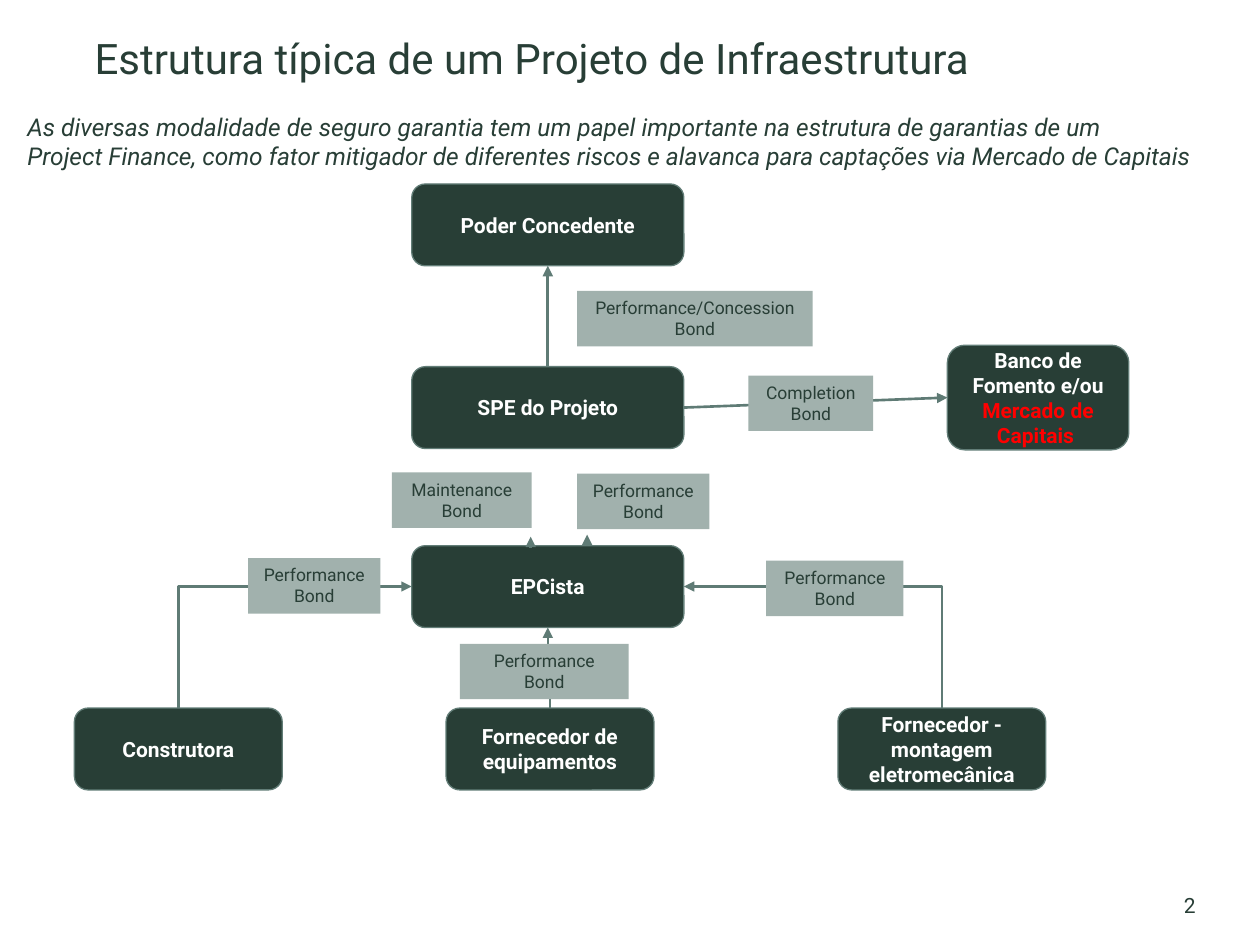
from dataclasses import dataclass

from lxml.etree import SubElement
from pptx import Presentation
from pptx.dml.color import RGBColor
from pptx.enum.shapes import MSO_CONNECTOR, MSO_SHAPE
from pptx.enum.text import MSO_ANCHOR, PP_ALIGN
from pptx.oxml.ns import qn
from pptx.util import Pt

FONT = "Roboto"
COLORS = {
    "dark": "283E36",
    "border": "627D77",
    "arrow": "5F7B75",
    "bond": "A1B1AD",
    "white": "FFFFFF",
    "accent": "FF0000",
}
BOND_HEIGHT = 31.7


@dataclass(frozen=True)
class Party:
    text: str
    left: float
    top: float
    width: float
    height: float = 46.8
    accent: str = ""

    @property
    def right(self) -> float:
        return self.left + self.width

    @property
    def bottom(self) -> float:
        return self.top + self.height

    @property
    def center(self) -> float:
        return self.left + self.width / 2

    @property
    def middle(self) -> float:
        return self.top + self.height / 2


@dataclass(frozen=True)
class Bond:
    kind: str
    left: float
    top: float
    width: float


@dataclass(frozen=True)
class RisingArrow:
    start_x: float
    start_y: float
    end_x: float
    end_y: float
    preset: str = "bentConnector3"


GRANTOR = Party("Poder Concedente", 235.3, 105.1, 155.5)
PROJECT = Party("SPE do Projeto", 235.3, 209.5, 155.5)
CONTRACTOR = Party("EPCista", 235.3, 311.8, 155.5)
BANK = Party("Banco de Fomento e/ou ", 541.4, 197.3, 103.7, 59.8, "Mercado de Capitais ")
BUILDER = Party("Construtora", 42.5, 404.6, 118.8)
SUPPLIER = Party("Fornecedor de equipamentos", 254.9, 404.6, 118.8)
ASSEMBLER = Party("Fornecedor -\nmontagem eletromecânica", 478.8, 404.6, 118.8)
PARTIES = [CONTRACTOR, PROJECT, BANK, BUILDER, SUPPLIER, ASSEMBLER, GRANTOR]

RISING_ARROWS = [
    RisingArrow(BUILDER.center, BUILDER.top, CONTRACTOR.left, CONTRACTOR.middle, "bentConnector2"),
    RisingArrow(SUPPLIER.center, SUPPLIER.top, CONTRACTOR.center, CONTRACTOR.bottom),
    RisingArrow(ASSEMBLER.center, ASSEMBLER.top, CONTRACTOR.right, CONTRACTOR.middle, "bentConnector2"),
    RisingArrow(335.5, CONTRACTOR.top, 335.5, 305.5),
    RisingArrow(303.3, 313, 303.3, 306.7),
    RisingArrow(PROJECT.center, PROJECT.top, GRANTOR.center, GRANTOR.bottom),
]

BONDS = [
    Bond("Performance", 141.8, 319, 75.6),
    Bond("Performance", 437.8, 320.4, 78.5),
    Bond("Performance", 262.8, 367.9, 96.5),
    Bond("Performance", 329.8, 270.7, 75.6),
    Bond("Performance/Concession", 329.8, 166.3, 134.6),
    Bond("Maintenance", 223.9, 270, 79.9),
    Bond("Completion", 427.7, 214.6, 71.3),
]


def rgb(name: str) -> RGBColor:
    return RGBColor.from_string(COLORS[name])


def write_text(text_frame, text: str, *, size: float, color: str = "dark", bold=False,
               italic=False, align=PP_ALIGN.LEFT, anchor=MSO_ANCHOR.TOP, wrap=True,
               margin=None, line_spacing=None, accent: str = "") -> None:
    text_frame.word_wrap = wrap
    text_frame.vertical_anchor = anchor
    if margin is not None:
        text_frame.margin_left = text_frame.margin_right = Pt(margin)
        text_frame.margin_top = text_frame.margin_bottom = Pt(margin)
    lines = text.split("\n")
    for index, line in enumerate(lines):
        paragraph = text_frame.paragraphs[0] if index == 0 else text_frame.add_paragraph()
        paragraph.alignment = align
        if line_spacing:
            paragraph.line_spacing = line_spacing
        pieces = [(line, color)]
        if accent and index == len(lines) - 1:
            pieces.append((accent, "accent"))
        for content, run_color in pieces:
            run = paragraph.add_run()
            run.text = content
            run.font.name = FONT
            run.font.size = Pt(size)
            run.font.bold = bold
            run.font.italic = italic
            run.font.color.rgb = rgb(run_color)


def add_box(slide, preset, left: float, top: float, width: float, height: float, fill: str):
    shape = slide.shapes.add_shape(preset, Pt(left), Pt(top), Pt(width), Pt(height))
    shape.shadow.inherit = False
    shape.fill.solid()
    shape.fill.fore_color.rgb = rgb(fill)
    return shape


def draw_party(slide, party: Party) -> None:
    shape = add_box(slide, MSO_SHAPE.ROUNDED_RECTANGLE, party.left, party.top,
                    party.width, party.height, "dark")
    shape.line.color.rgb = rgb("border")
    shape.line.width = Pt(0.75)
    write_text(shape.text_frame, party.text, size=12, color="white", bold=True,
               align=PP_ALIGN.CENTER, anchor=MSO_ANCHOR.MIDDLE, accent=party.accent)


def draw_bond(slide, bond: Bond) -> None:
    shape = add_box(slide, MSO_SHAPE.RECTANGLE, bond.left, bond.top,
                    bond.width, BOND_HEIGHT, "bond")
    shape.line.fill.background()
    write_text(shape.text_frame, f"{bond.kind}\nBond", size=10, align=PP_ALIGN.CENTER)


def add_arrow(slide, kind, start_x: float, start_y: float, end_x: float, end_y: float):
    connector = slide.shapes.add_connector(kind, Pt(start_x), Pt(start_y), Pt(end_x), Pt(end_y))
    connector.line.color.rgb = rgb("arrow")
    connector.line.width = Pt(1.5)
    SubElement(connector.line._get_or_add_ln(), qn("a:tailEnd"), type="triangle")
    SubElement(connector.element.spPr, qn("a:effectLst"))
    return connector


def draw_rising_arrow(slide, arrow: RisingArrow) -> None:
    center_x = (arrow.start_x + arrow.end_x) / 2
    center_y = (arrow.start_y + arrow.end_y) / 2
    half_width = (arrow.start_y - arrow.end_y) / 2
    half_height = abs(arrow.end_x - arrow.start_x) / 2
    goes_right = arrow.end_x > arrow.start_x
    side = half_width if goes_right else -half_width
    connector = add_arrow(slide, MSO_CONNECTOR.ELBOW, center_x + side, center_y + half_height,
                          center_x - side, center_y - half_height)
    properties = connector.element.spPr
    properties.find(qn("a:xfrm")).set("rot", str((90 if goes_right else 270) * 60000))
    properties.find(qn("a:prstGeom")).set("prst", arrow.preset)


def add_text(slide, left: float, top: float, width: float, height: float, text: str, **style) -> None:
    text_box = slide.shapes.add_textbox(Pt(left), Pt(top), Pt(width), Pt(height))
    write_text(text_box.text_frame, text, **style)


def main() -> None:
    presentation = Presentation()
    presentation.slide_width, presentation.slide_height = Pt(720), Pt(540)
    slide = presentation.slides.add_slide(presentation.slide_layouts[5])
    title = slide.shapes.title
    title.left, title.top, title.width, title.height = Pt(54), Pt(21.6), Pt(629.3), Pt(38.9)
    write_text(title.text_frame, "Estrutura típica de um Projeto de Infraestrutura",
               size=24, margin=0, line_spacing=0.9)
    add_text(slide, 666, 509.8, 17.3, 14.4, "2", size=12, align=PP_ALIGN.RIGHT,
             anchor=MSO_ANCHOR.BOTTOM, margin=0)
    for party in PARTIES:
        draw_party(slide, party)
    for arrow in RISING_ARROWS:
        draw_rising_arrow(slide, arrow)
    add_arrow(slide, MSO_CONNECTOR.STRAIGHT, PROJECT.right, PROJECT.middle, BANK.left, BANK.middle)
    for bond in BONDS:
        draw_bond(slide, bond)
    add_text(slide, 8.6, 60.5, 730.8, 41,
             "As diversas modalidade de seguro garantia tem um papel importante na estrutura "
             "de garantias de um\nProject Finance, como fator mitigador de diferentes riscos "
             "e alavanca para captações via Mercado de Capitais", size=14, italic=True)
    presentation.save("out.pptx")


if __name__ == "__main__":
    main()
